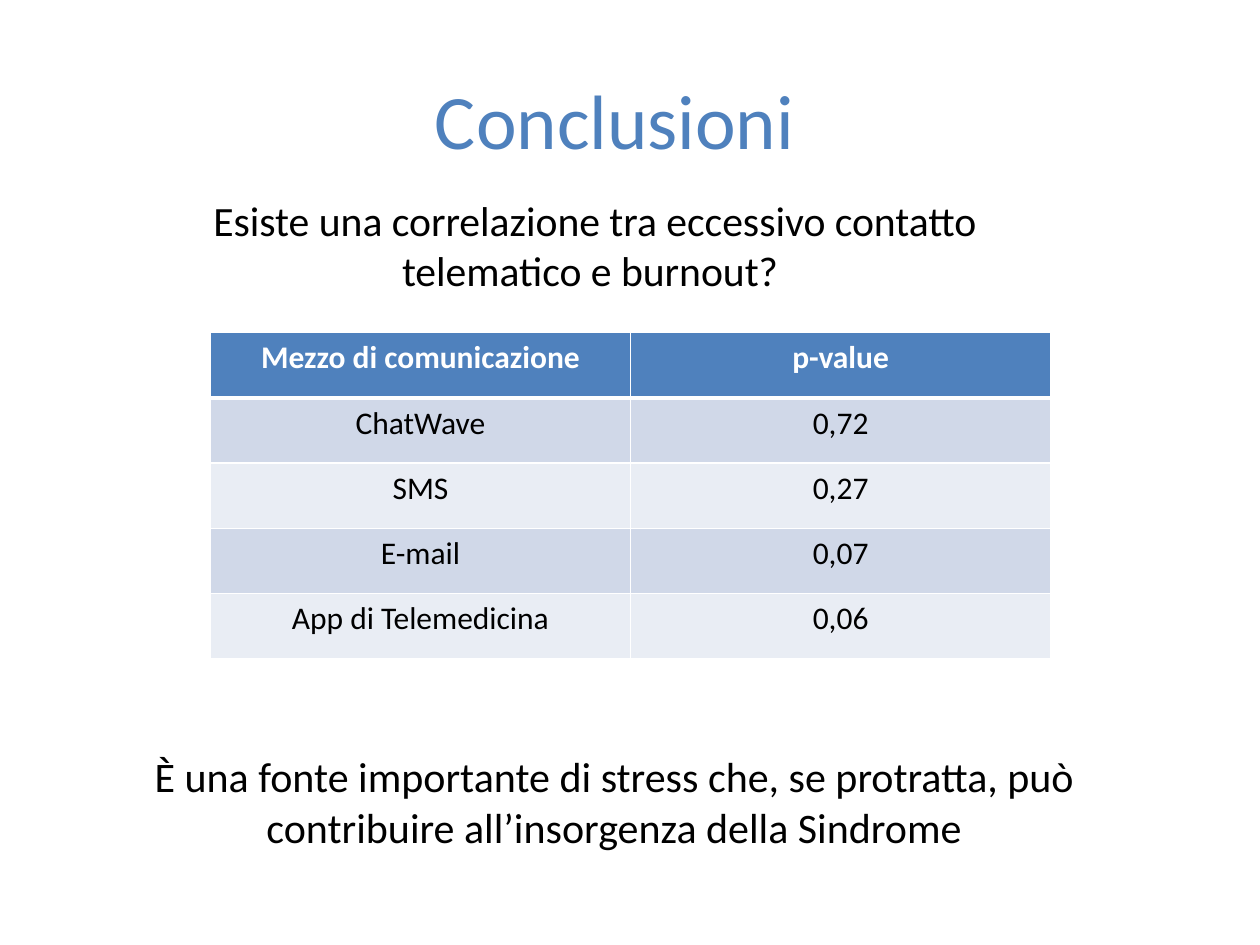
from dataclasses import dataclass

from lxml import etree
from pptx import Presentation
from pptx.dml.color import RGBColor
from pptx.enum.text import MSO_ANCHOR, PP_ALIGN
from pptx.oxml.ns import qn
from pptx.util import Inches, Pt

CENTER = PP_ALIGN.CENTER
TOP, MIDDLE = MSO_ANCHOR.TOP, MSO_ANCHOR.MIDDLE
BLANK_LAYOUT = 6


@dataclass(frozen=True)
class Theme:
    font: str = "Calibri"
    accent: str = "4F81BD"
    ink: str = "000000"
    paper: str = "FFFFFF"
    bands: tuple = ("D0D8E8", "E9EDF4")
    title_size: float = 44
    question_size: float = 23.8
    answer_size: float = 24
    table_size: float = 18
    rule: float = 1
    header_rule: float = 3


THEME = Theme()

P_VALUES = [
    ("Mezzo di comunicazione", "p-value"),
    ("ChatWave", "0,72"),
    ("SMS", "0,27"),
    ("E-mail", "0,07"),
    ("App di Telemedicina", "0,06"),
]


def style_paragraph(para, size, color, bold=False):
    para.alignment = CENTER
    para.font.name = THEME.font
    para.font.size = Pt(size)
    para.font.bold = bold
    para.font.color.rgb = RGBColor.from_string(color)


def add_text(page, text, left, top, width, height, size, color=THEME.ink, anchor=TOP):
    box = page.shapes.add_textbox(Inches(left), Inches(top), Inches(width), Inches(height))
    frame = box.text_frame
    frame.word_wrap = True
    frame.vertical_anchor = anchor
    frame.text = text
    style_paragraph(frame.paragraphs[0], size, color)


def set_borders(cell, top, bottom):
    """Draw all four cell edges; top and bottom are widths in points."""
    properties = cell._tc.get_or_add_tcPr()
    widths = {"a:lnL": THEME.rule, "a:lnR": THEME.rule, "a:lnT": top, "a:lnB": bottom}
    for tag, width in widths.items():
        line = etree.SubElement(properties, qn(tag), w=str(Pt(width)))
        fill = etree.SubElement(line, qn("a:solidFill"))
        etree.SubElement(fill, qn("a:srgbClr"), val=THEME.paper)


def style_cell(cell, row):
    """Style a cell as header (row 0) or as part of a banded body row."""
    header = row == 0
    set_borders(
        cell,
        top=THEME.header_rule if row == 1 else THEME.rule,
        bottom=THEME.header_rule if header else THEME.rule,
    )
    fill_color = THEME.accent if header else THEME.bands[(row - 1) % 2]
    cell.fill.solid()
    cell.fill.fore_color.rgb = RGBColor.from_string(fill_color)
    text_color = THEME.paper if header else THEME.ink
    style_paragraph(cell.text_frame.paragraphs[0], THEME.table_size, text_color, header)


def add_table(page, rows, left, top, width, height):
    table = page.shapes.add_table(
        len(rows), len(rows[0]), Inches(left), Inches(top), Inches(width), Inches(height)
    ).table
    for row, values in enumerate(rows):
        for column, value in enumerate(values):
            cell = table.cell(row, column)
            cell.text = value
            style_cell(cell, row)


def main():
    deck = Presentation()
    deck.slide_width, deck.slide_height = Inches(10), Inches(7.5)
    page = deck.slides.add_slide(deck.slide_layouts[BLANK_LAYOUT])

    add_text(page, "Conclusioni", 0.63, 0.14, 8.5, 1.61,
             THEME.title_size, THEME.accent, MIDDLE)
    add_text(page, "Esiste una correlazione tra eccessivo contatto telematico e burnout? ",
             1.22, 1.5, 7, 0.75, THEME.question_size)
    add_text(page, "È una fonte importante di stress che, se protratta, può "
             "contribuire all’insorgenza della Sindrome",
             0.82, 5.91, 8.11, 0.91, THEME.answer_size)
    add_table(page, P_VALUES, 1.67, 2.64, 6.67, 2.59)

    deck.save("out.pptx")


if __name__ == "__main__":
    main()
